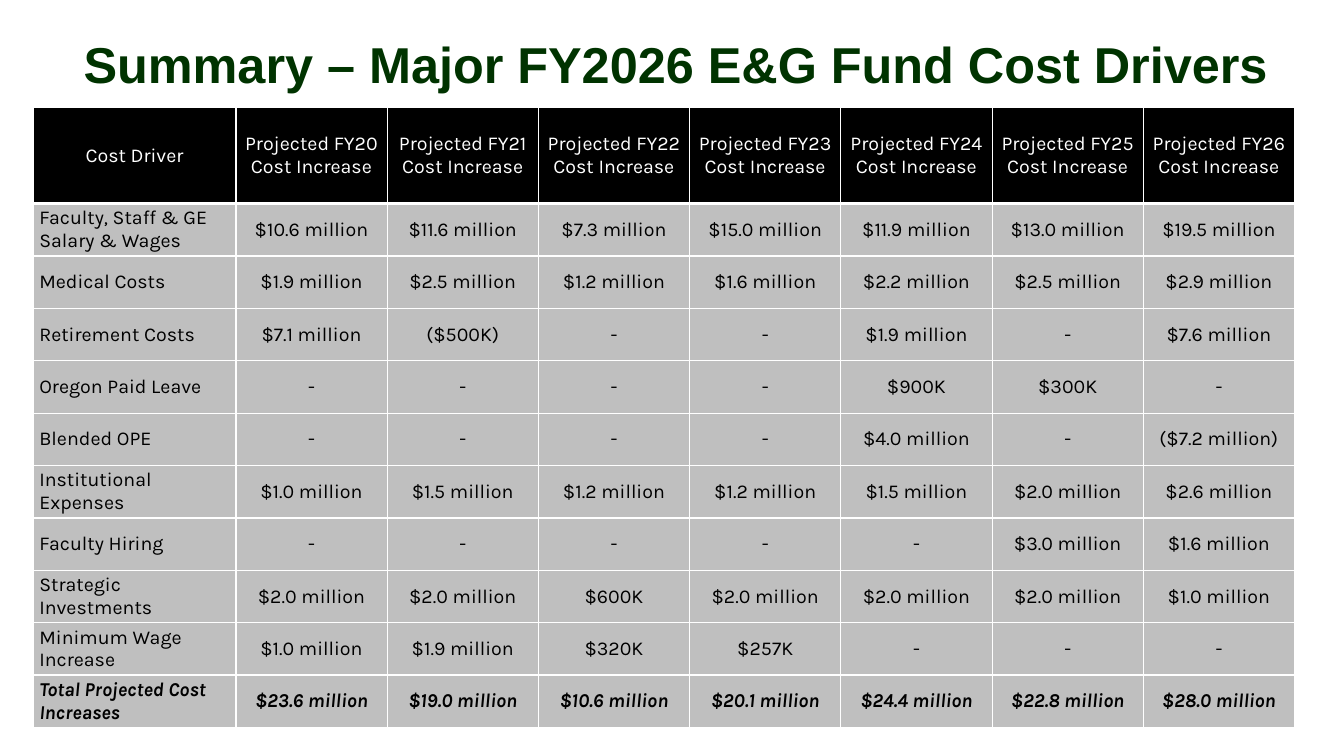
from lxml import etree
from pptx import Presentation
from pptx.dml.color import RGBColor
from pptx.enum import text
from pptx.oxml import ns
from pptx.util import Inches, Pt

BLACK = RGBColor(0x00, 0x00, 0x00)
WHITE = RGBColor(0xFF, 0xFF, 0xFF)
GRAY = RGBColor(0xBF, 0xBF, 0xBF)
GREEN = RGBColor(0x00, 0x33, 0x00)

HEADINGS = ["Cost Driver"] + [f"Projected FY{year} Cost Increase" for year in range(20, 27)]
COSTS = [
    ("Faculty, Staff & GE Salary & Wages", "$10.6 million", "$11.6 million", "$7.3 million",
     "$15.0 million", "$11.9 million", "$13.0 million", "$19.5 million"),
    ("Medical Costs", "$1.9 million", "$2.5 million", "$1.2 million",
     "$1.6 million", "$2.2 million", "$2.5 million", "$2.9 million"),
    ("Retirement Costs", "$7.1 million", "($500K)", "-", "-", "$1.9 million", "-", "$7.6 million"),
    ("Oregon Paid Leave", "-", "-", "-", "-", "$900K", "$300K", "-"),
    ("Blended OPE", "-", "-", "-", "-", "$4.0 million", "-", "($7.2 million)"),
    ("Institutional Expenses", "$1.0 million", "$1.5 million", "$1.2 million",
     "$1.2 million", "$1.5 million", "$2.0 million", "$2.6 million"),
    ("Faculty Hiring", "-", "-", "-", "-", "-", "$3.0 million", "$1.6 million"),
    ("Strategic Investments", "$2.0 million", "$2.0 million", "$600K",
     "$2.0 million", "$2.0 million", "$2.0 million", "$1.0 million"),
    ("Minimum Wage Increase", "$1.0 million", "$1.9 million", "$320K", "$257K", "-", "-", "-"),
    ("Total Projected Cost Increases", "$23.6 million", "$19.0 million", "$10.6 million",
     "$20.1 million", "$24.4 million", "$22.8 million", "$28.0 million"),
]


def add_border(cell, side, points):
    line = etree.SubElement(cell._tc.get_or_add_tcPr(), ns.qn(f"a:{side}"), w=str(Pt(points)))
    fill = etree.SubElement(line, ns.qn("a:solidFill"))
    etree.SubElement(fill, ns.qn("a:srgbClr"), val=str(WHITE))


deck = Presentation()
deck.slide_width = Inches(13.33)
deck.slide_height = Inches(7.5)
page = deck.slides.add_slide(deck.slide_layouts[6])

rows = [HEADINGS, *COSTS]
frame = page.shapes.add_table(len(rows), len(HEADINGS), Inches(0.33), Inches(1.07),
                              Inches(12.5), Inches(6.18))
table = frame.table
for index, column in enumerate(table.columns):
    column.width = Inches(1.5 if index else 2.01)
for index, row in enumerate(table.rows):
    row.height = Inches(0.52 if index else 0.95)

for row_index, row in enumerate(rows):
    is_header = row_index == 0
    is_total = row_index == len(rows) - 1
    for column_index, wording in enumerate(row):
        cell = table.cell(row_index, column_index)
        add_border(cell, "lnL", 1)
        add_border(cell, "lnR", 1)
        if is_header:
            add_border(cell, "lnT", 1)
        add_border(cell, "lnB", 3 if is_header else 1)
        cell.fill.solid()
        cell.fill.fore_color.rgb = BLACK if is_header else GRAY
        cell.margin_left = cell.margin_right = Inches(0.06)
        cell.margin_top = cell.margin_bottom = Inches(0.03)
        cell.vertical_anchor = text.MSO_ANCHOR.MIDDLE
        cell.text = wording
        para = cell.text_frame.paragraphs[0]
        centered = is_header or column_index > 0
        para.alignment = text.PP_ALIGN.CENTER if centered else text.PP_ALIGN.LEFT
        para.font.name = "Karla"
        para.font.size = Pt(14)
        para.font.bold = para.font.italic = is_total
        para.font.color.rgb = WHITE if is_header else BLACK

title = page.shapes.add_textbox(Inches(0.33), Inches(0.17), Inches(12.75), Inches(0.91))
title.text_frame.word_wrap = True
title.text_frame.vertical_anchor = text.MSO_ANCHOR.MIDDLE
para = title.text_frame.paragraphs[0]
para.text = "Summary – Major FY2026 E&G Fund Cost Drivers"
para.alignment = text.PP_ALIGN.CENTER
para.font.name = "Arial"
para.font.size = Pt(36)
para.font.bold = True
para.font.color.rgb = GREEN

deck.save("out.pptx")
